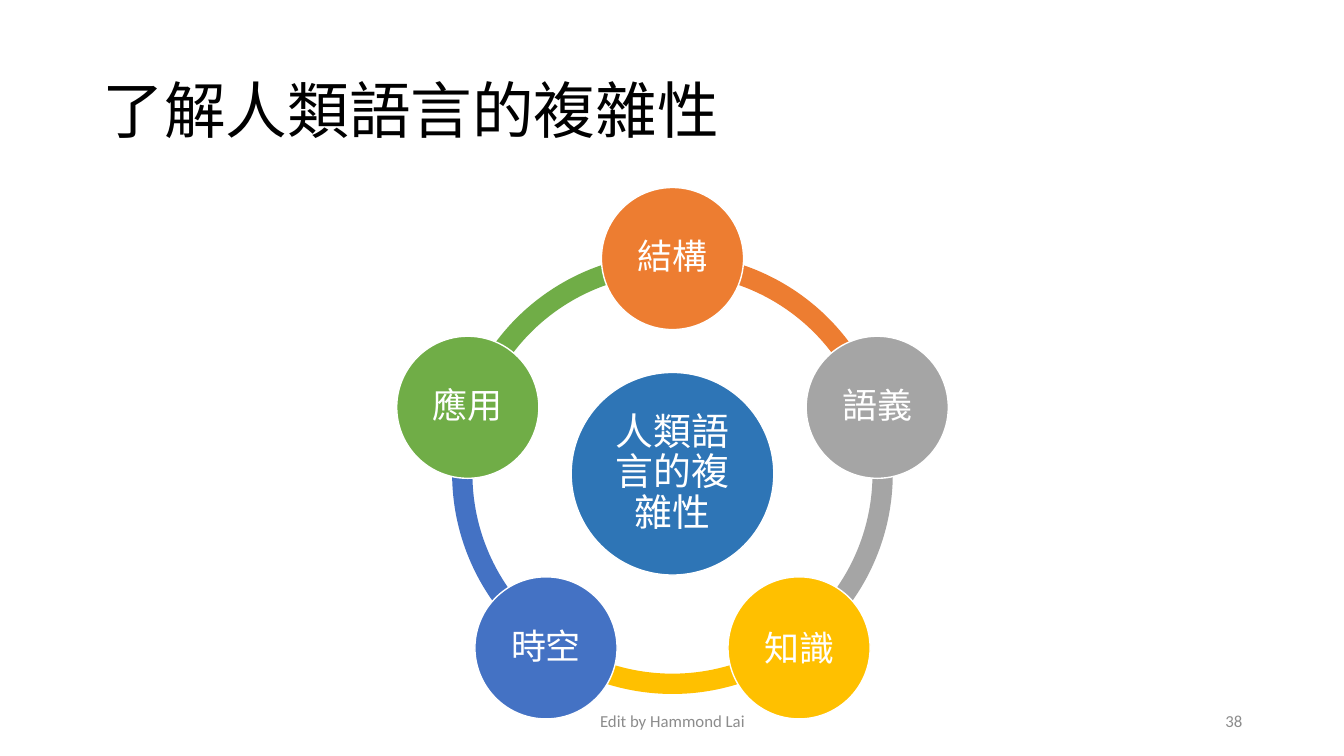
from math import cos, radians, sin

from lxml.etree import SubElement
from pptx import Presentation
from pptx.dml.color import RGBColor
from pptx.enum.shapes import MSO_SHAPE
from pptx.enum.text import MSO_ANCHOR, PP_ALIGN
from pptx.oxml.ns import qn
from pptx.util import Inches, Pt

BLACK = RGBColor(0x00, 0x00, 0x00)
WHITE = RGBColor(0xFF, 0xFF, 0xFF)
FOOTER_GRAY = RGBColor(0x8C, 0x8C, 0x8C)
BLUE = RGBColor(0x2E, 0x75, 0xB6)
ORANGE = RGBColor(0xED, 0x7D, 0x31)
GRAY = RGBColor(0xA5, 0xA5, 0xA5)
GOLD = RGBColor(0xFF, 0xC0, 0x00)
INDIGO = RGBColor(0x44, 0x72, 0xC4)
GREEN = RGBColor(0x70, 0xAD, 0x47)

LATIN_FONT = "Calibri"
CHINESE_FONT = "Noto Sans CJK TC"

TITLE = "了解人類語言的複雜性"
HUB = "人類語言的複雜性"
# Clockwise from the top: label, colour, line spacing
ASPECTS = [
    ("結構", ORANGE, 0.9),
    ("語義", GRAY, 0.9),
    ("知識", GOLD, 1.0),
    ("時空", INDIGO, 0.9),
    ("應用", GREEN, 0.9),
]
FOOTER = "Edit by Hammond Lai"
PAGE_NUMBER = "38"

CENTER_X, CENTER_Y = 6.67, 4.7
RING_SIZE = 4.37
RING_THICKNESS = 0.046
ORBIT = 2.135
HUB_SIZE = 2.01
ASPECT_SIZE = 1.41
STEP = 360 / len(ASPECTS)
ARC_UNITS_PER_DEGREE = 0.6  # 60000 angle units per degree, scaled by 100000


def write(shape, text, size, color, font, align, spacing=1.0):
    frame = shape.text_frame
    frame.word_wrap = True
    frame.vertical_anchor = MSO_ANCHOR.MIDDLE
    para = frame.paragraphs[0]
    para.alignment = align
    para.line_spacing = spacing
    span = para.add_run()
    span.text = text
    span.font.size = Pt(size)
    span.font.color.rgb = color
    span.font.name = font
    SubElement(span.font._element, qn("a:ea")).set("typeface", CHINESE_FONT)


def add_text(page, box, *style):
    write(page.shapes.add_textbox(*map(Inches, box)), *style)


def add_centered(page, kind, x, y, size, color):
    """Add a square-framed shape around the point x, y."""
    shape = page.shapes.add_shape(
        kind, Inches(x - size / 2), Inches(y - size / 2), Inches(size), Inches(size)
    )
    shape.shadow.inherit = False
    shape.fill.solid()
    shape.fill.fore_color.rgb = color
    shape.line.fill.background()
    return shape


def add_arc(page, start, color):
    arc = add_centered(page, MSO_SHAPE.BLOCK_ARC, CENTER_X, CENTER_Y, RING_SIZE, color)
    arc.adjustments[0] = start % 360 * ARC_UNITS_PER_DEGREE
    arc.adjustments[1] = (start + STEP) % 360 * ARC_UNITS_PER_DEGREE
    arc.adjustments[2] = RING_THICKNESS


def add_circle(page, x, y, size, color, text, text_size, margin, spacing):
    circle = add_centered(page, MSO_SHAPE.OVAL, x, y, size, color)
    circle.line.color.rgb = WHITE
    circle.line.width = Pt(1)
    frame = circle.text_frame
    frame.margin_left = frame.margin_right = Inches(margin)
    frame.margin_top = frame.margin_bottom = Inches(margin)
    write(circle, text, text_size, WHITE, CHINESE_FONT, PP_ALIGN.CENTER, spacing)


def main():
    deck = Presentation()
    deck.slide_width, deck.slide_height = Inches(13.33), Inches(7.5)
    page = deck.slides.add_slide(deck.slide_layouts[6])

    add_text(page, (0.92, 0.4, 11.5, 1.45), TITLE, 44, BLACK, LATIN_FONT, PP_ALIGN.LEFT, 0.9)

    angles = [-90 + index * STEP for index in range(len(ASPECTS))]
    for angle, (_, color, _) in zip(angles, ASPECTS):
        add_arc(page, angle, color)

    add_circle(page, CENTER_X, CENTER_Y, HUB_SIZE, BLUE, HUB, 27, 0.04, 0.9)
    for angle, (label, color, spacing) in zip(angles, ASPECTS):
        x = CENTER_X + ORBIT * cos(radians(angle))
        y = CENTER_Y + ORBIT * sin(radians(angle))
        add_circle(page, x, y, ASPECT_SIZE, color, label, 25, 0.03, spacing)

    add_text(page, (4.42, 6.95, 4.5, 0.4), FOOTER, 12, FOOTER_GRAY, LATIN_FONT, PP_ALIGN.CENTER)
    add_text(page, (9.42, 6.95, 3, 0.4), PAGE_NUMBER, 12, FOOTER_GRAY, LATIN_FONT, PP_ALIGN.RIGHT)
    deck.save("out.pptx")


if __name__ == "__main__":
    main()
